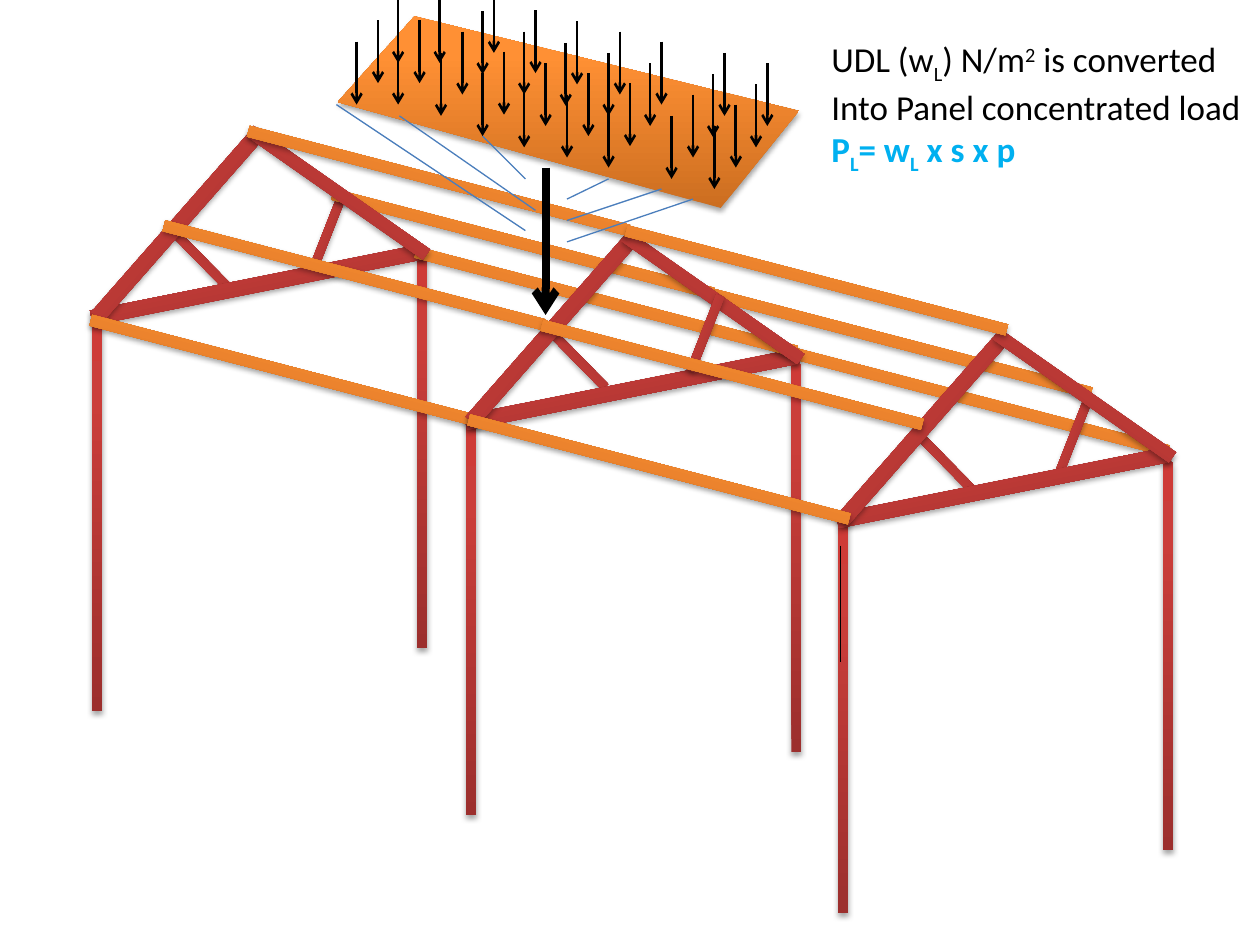
from lxml.etree import SubElement
from pptx import Presentation
from pptx.dml.color import RGBColor
from pptx.enum.shapes import MSO_CONNECTOR, MSO_SHAPE
from pptx.oxml.ns import qn
from pptx.util import Inches, Pt

STEEL = [(0, "9C2F2D"), (80, "CB3E3A"), (100, "CE3B37")]
TIMBER = [(0, "CC6E20"), (80, "FF9034"), (100, "FF9136")]
BLACK, BLUE, CYAN = "000000", "4B7EBC", "00B0F0"

# Offset of each repeat from the first one
FRAMES = [(0, 0), (2.97, 0.83), (5.92, 1.61)]
BRACES = [(0, 0), (3, 0.8), (5.92, 1.62)]
BAYS = [(0, 0), (3, 0.79)]
REAR_EAVE_BAYS = [(0, 0), (2.95, 0.79)]

COLUMN, TIE, BRACE, PURLIN = (0.08, 3.08), (2.69, 0.12), (0.64, 0.07), (3.12, 0.09)
LEFT_RAFTER, RIGHT_RAFTER = (1.88, 0.12), (1.71, 0.1)

# name: (left, top) of the first, size, rotation, colours, offsets
MEMBERS = {
    "front column": ((0.73, 2.56), COLUMN, 0, STEEL, FRAMES),
    "rear column": ((3.31, 2.06), COLUMN, 0, STEEL, FRAMES),
    "tie": ((0.7, 2.2), TIE, 348.7, STEEL, FRAMES),
    "left rafter": ((0.45, 1.75), LEFT_RAFTER, 311.3, STEEL, FRAMES),
    "right rafter": ((1.83, 1.48), RIGHT_RAFTER, 35, STEEL, FRAMES),
    "front brace": ((1.26, 2.01), BRACE, 45.6, STEEL, BRACES),
    "rear brace": ((2.28, 1.81), BRACE, 111.4, STEEL, BRACES),
    "front eave": ((0.67, 2.89), PURLIN, 14.6, TIMBER, BAYS),
    "front purlin": ((1.25, 2.14), PURLIN, 14.6, TIMBER, BAYS),
    "ridge": ((1.92, 1.39), PURLIN, 14.6, TIMBER, BAYS),
    "rear purlin": ((2.59, 1.89), PURLIN, 14.6, TIMBER, BAYS),
    "rear eave": ((3.25, 2.35), PURLIN, 14.6, TIMBER, REAR_EAVE_BAYS),
}

# Back to front: member and which of its repeats
STACKING = [
    ("rear eave", [1]), ("rear brace", [2]), ("front brace", [2, 1, 0]),
    ("rear brace", [0]), ("rear purlin", [1, 0]),
    ("front column", [2]), ("rear column", [2]), ("tie", [2]),
    ("left rafter", [2]), ("right rafter", [2]),
    ("front column", [1]), ("rear column", [1]), ("tie", [1]),
    ("front column", [0]), ("rear column", [0]), ("tie", [0]),
    ("left rafter", [0]), ("front eave", [0]), ("rear eave", [0]),
    ("left rafter", [1]), ("right rafter", [1, 0]), ("front eave", [1]),
    ("ridge", [0, 1]), ("front purlin", [0]), ("rear brace", [1]),
    ("front purlin", [1]),
]

PANEL = [(3.29, 0.13), (6.34, 0.88), (5.72, 1.65), (2.68, 0.81)]

# Each load row: top of its first arrow, and the first step it uses
LOAD_STEPS = [(0, 0), (-0.09, 0.17), (-0.25, 0.33), (-0.42, 0.5)]
LOAD_ROWS = [
    (6.09, 0.5, 0), (5.75, 0.42, 0), (5.25, 0.33, 0), (4.92, 0.25, 0),
    (4.58, 0.17, 0), (4.25, 0.08, 0), (3.92, -0.08, 0),
    (3.58, -0.17, 1), (3.25, -0.17, 1),
]
LOAD_LENGTH = 0.5

COLUMN_MARK = ((6.67, 4.33), (6.67, 5.25))
PANEL_LOAD = ((4.33, 1.33), (4.33, 2.5))
SPREAD_LINES = [
    ((5.5, 1.58), (4.5, 1.92)), ((5.25, 1.5), (4.5, 1.75)),
    ((2.67, 0.83), (4.17, 1.83)), ((3.17, 0.92), (4.25, 1.67)),
    ((4.83, 1.42), (4.5, 1.58)), ((3.83, 1.08), (4.17, 1.42)),
]

# Paragraphs of (text, baseline shift in percent), with colour and weight
NOTE = [
    ([("UDL (w", 0), ("L", -25), (") N/m", 0), ("2", 30), (" is converted", 0)],
     BLACK, False),
    ([("Into Panel concentrated load", 0)], BLACK, False),
    ([("P", 0), ("L", -25), ("= w", 0), ("L", -25), (" x s x p", 0)], CYAN, True),
]


def color(value):
    return RGBColor.from_string(value)


def finish(shape, stops):
    """Give a solid member its vertical gradient and soft shadow."""
    shape.fill.gradient()
    shape.fill.gradient_angle = 90
    properties = shape._element.spPr
    stop_list = properties.find(qn("a:gradFill")).find(qn("a:gsLst"))
    stop_list.clear()
    for percent, value in stops:
        stop = SubElement(stop_list, qn("a:gs"), pos=str(percent * 1000))
        SubElement(stop, qn("a:srgbClr"), val=value)
    shape.line.fill.background()
    shape.shadow.inherit = False
    shadow = SubElement(properties.find(qn("a:effectLst")), qn("a:outerShdw"),
                        blurRad=str(Pt(3.1)), dist=str(Pt(1.8)),
                        dir="5400000", rotWithShape="0")
    tint = SubElement(shadow, qn("a:srgbClr"), val=BLACK)
    SubElement(tint, qn("a:alpha"), val="35000")


def add_member(page, name, index):
    (left, top), size, rotation, stops, offsets = MEMBERS[name]
    shift_x, shift_y = offsets[index]
    bar = page.shapes.add_shape(
        MSO_SHAPE.RECTANGLE, Inches(left + shift_x), Inches(top + shift_y),
        *map(Inches, size))
    bar.rotation = rotation
    if size == BRACE:
        bar._element.spPr.xfrm.set("flipV", "1")
    finish(bar, stops)


def add_panel(page):
    corners = [(Inches(x), Inches(y)) for x, y in PANEL]
    builder = page.shapes.build_freeform(*corners[0])
    builder.add_line_segments(corners[1:], close=True)
    finish(builder.convert_to_shape(), TIMBER)


def add_line(page, start, end, value=BLACK, width=0.75, arrow=False):
    line = page.shapes.add_connector(
        MSO_CONNECTOR.STRAIGHT, *map(Inches, (*start, *end)))
    line.line.color.rgb = color(value)
    line.line.width = Pt(width)
    if arrow:
        SubElement(line.line._get_or_add_ln(), qn("a:tailEnd"), type="arrow")
    SubElement(line._element.spPr, qn("a:effectLst"))


def add_note(page):
    box = page.shapes.add_textbox(Inches(6.5), Inches(0.25), Inches(3.5), Inches(1.11))
    frame = box.text_frame
    frame.word_wrap = True
    frame.margin_right = 0
    for number, (pieces, value, bold) in enumerate(NOTE):
        para = frame.add_paragraph() if number else frame.paragraphs[0]
        for text, shift in pieces:
            span = para.add_run()
            span.text = text
            font = span.font
            font.name, font.size, font.bold = "Calibri", Pt(20), bold
            font.color.rgb = color(value)
            if shift:
                font._element.set("baseline", str(shift * 1000))


def main():
    deck = Presentation()
    deck.slide_width, deck.slide_height = Inches(10), Inches(7.5)
    page = deck.slides.add_slide(deck.slide_layouts[6])
    for name, indexes in STACKING:
        for index in indexes:
            add_member(page, name, index)
    add_line(page, *COLUMN_MARK)
    add_note(page)
    add_panel(page)
    for left, top, first in LOAD_ROWS:
        for step_x, step_y in LOAD_STEPS[first:]:
            # Rows that skip the first step are measured from where it would be
            x, y = left + step_x, top + step_y
            add_line(page, (x, y), (x, y + LOAD_LENGTH), width=1.5, arrow=True)
    add_line(page, *PANEL_LOAD, width=4.5, arrow=True)
    for start, end in SPREAD_LINES:
        add_line(page, start, end, BLUE)
    deck.save("out.pptx")


if __name__ == "__main__":
    main()
